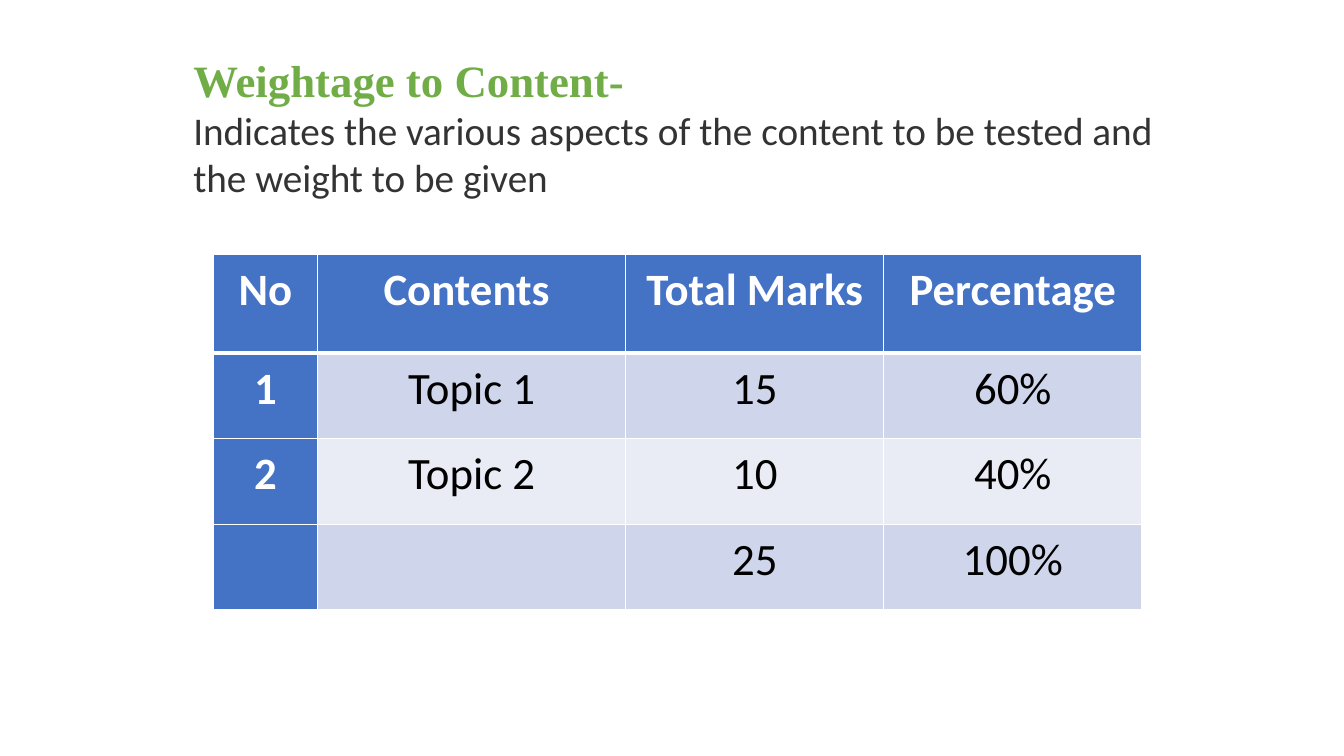
from dataclasses import dataclass

from lxml import etree
from pptx import Presentation
from pptx.dml.color import RGBColor
from pptx.enum import text
from pptx.oxml import ns
from pptx.util import Pt


@dataclass(frozen=True)
class Theme:
    green: str = "70AD47"
    gray: str = "333333"
    blue: str = "4472C4"
    white: str = "FFFFFF"
    black: str = "000000"
    bands: tuple = ("CFD5EA", "E9EBF5")
    serif: str = "Times New Roman"
    sans: str = "Calibri"
    large: int = 32
    body: int = 28


THEME = Theme()
MARKS = [
    ("No", "Contents ", "Total Marks", "Percentage"),
    ("1", "Topic 1", "15", "60%"),
    ("2", "Topic 2", "10", "40%"),
    ("", "", "25", "100%"),
]
WIDTHS = (74.2, 220.3, 184.3, 184.3)
HEIGHTS = (70.6, 61.2, 61.2, 61.2)


def add_run(para, words, size, font, color, bold=False):
    run = para.add_run()
    run.text = words
    run.font.size = Pt(size)
    run.font.name = font
    run.font.bold = bold
    run.font.color.rgb = RGBColor.from_string(color)


def add_intro(slide):
    box = slide.shapes.add_textbox(Pt(131), Pt(33.8), Pt(741.6), Pt(135.4))
    frame = box.text_frame
    frame.word_wrap = True
    frame.vertical_anchor = text.MSO_ANCHOR.TOP
    add_run(frame.paragraphs[0], "Weightage to Content-",
            THEME.large, THEME.serif, THEME.green, True)
    add_run(frame.add_paragraph(),
            "Indicates the various aspects of the content to be tested and "
            "the weight to be given", THEME.body, THEME.sans, THEME.gray)


def add_edge(cell, side, width):
    props = cell._tc.get_or_add_tcPr()
    line = etree.SubElement(props, ns.qn(f"a:ln{side}"), w=str(Pt(width)))
    fill = etree.SubElement(line, ns.qn("a:solidFill"))
    etree.SubElement(fill, ns.qn("a:srgbClr"), val=THEME.white)


def fill_cell(cell, words, row, col):
    head = row == 0 or col == 0
    # Borders: a thick rule divides the header from the body
    thick = {"T": row == 1, "B": row == 0}
    for side in "LRTB":
        add_edge(cell, side, 3 if thick.get(side) else 1)
    cell.fill.solid()
    color = THEME.blue if head else THEME.bands[(row - 1) % 2]
    cell.fill.fore_color.rgb = RGBColor.from_string(color)
    # Text
    if words:
        para = cell.text_frame.paragraphs[0]
        para.alignment = text.PP_ALIGN.CENTER
        para.line_spacing = 1.07
        para.space_after = Pt(8)
        add_run(para, words, THEME.large, THEME.sans,
                THEME.white if head else THEME.black, head)


def add_marks(slide):
    frame = slide.shapes.add_table(
        len(MARKS), len(WIDTHS), Pt(152.6), Pt(181.4),
        Pt(sum(WIDTHS)), Pt(sum(HEIGHTS)))
    table = frame.table
    table.first_col = True
    for col, width in zip(table.columns, WIDTHS):
        col.width = Pt(width)
    for row, height in zip(table.rows, HEIGHTS):
        row.height = Pt(height)
    for r, line in enumerate(MARKS):
        for c, words in enumerate(line):
            fill_cell(table.cell(r, c), words, r, c)


def main():
    deck = Presentation()
    deck.slide_width, deck.slide_height = Pt(960), Pt(540)
    slide = deck.slides.add_slide(deck.slide_layouts[6])
    add_marks(slide)
    add_intro(slide)
    deck.save("out.pptx")


if __name__ == "__main__":
    main()
